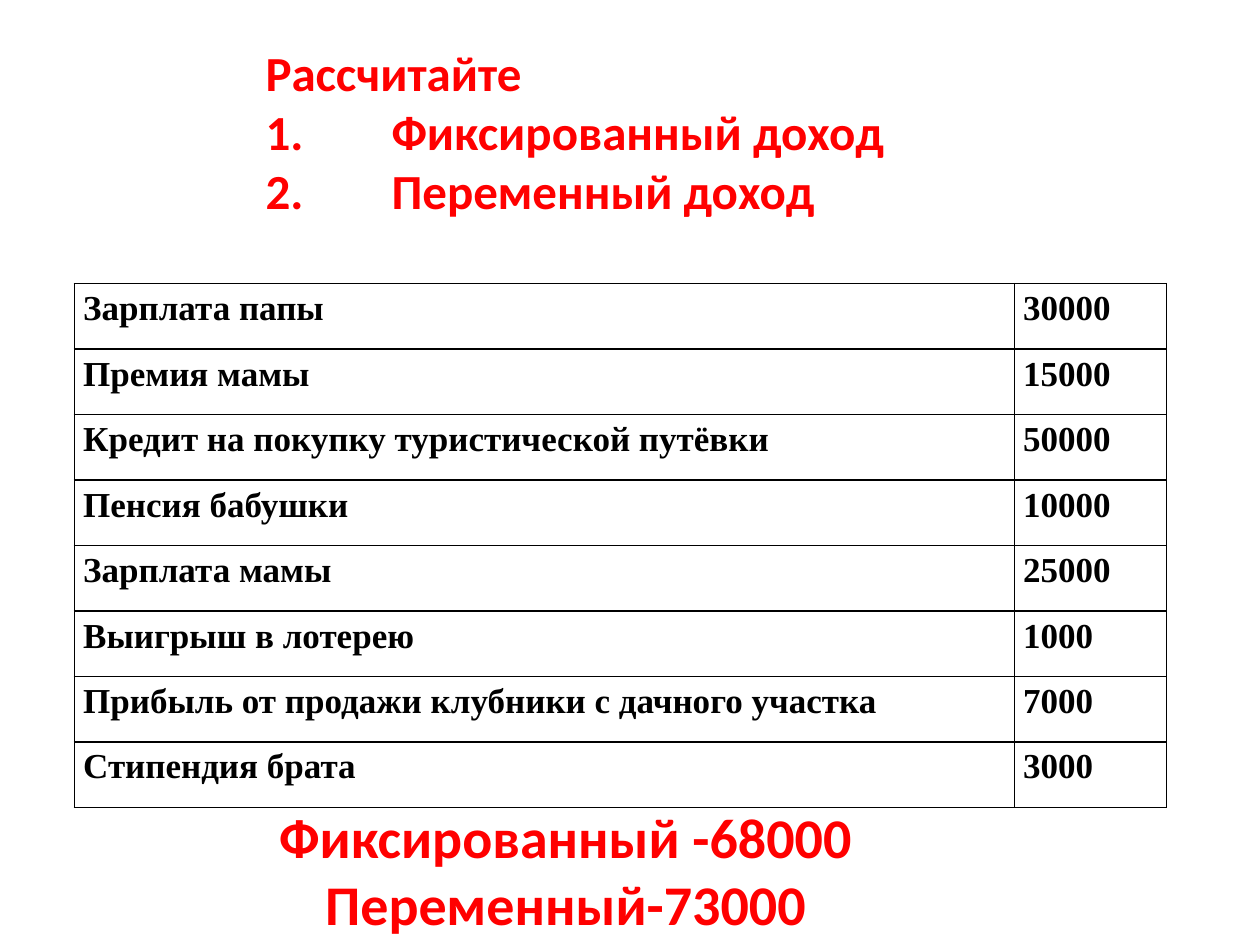
from lxml.etree import SubElement
from pptx import Presentation
from pptx.dml.color import RGBColor
from pptx.enum.text import MSO_AUTO_SIZE, PP_ALIGN
from pptx.oxml.ns import qn
from pptx.util import Inches, Pt

HUES = {"red": "FF0000", "ink": "000000"}
ROWS = [
    ("Зарплата папы", "30000"),
    ("Премия мамы", "15000"),
    ("Кредит на покупку туристической путёвки", "50000"),
    ("Пенсия бабушки", "10000"),
    ("Зарплата мамы", "25000"),
    ("Выигрыш в лотерею", "1000"),
    ("Прибыль от продажи клубники с дачного участка", "7000"),
    ("Стипендия брата", "3000"),
]


def add_run(para, text, size, face, hue):
    """Add one bold run to a paragraph."""
    run = para.add_run()
    run.text = text
    font = run.font
    font.size, font.name, font.bold = Pt(size), face, True
    font.color.rgb = RGBColor.from_string(HUES[hue])


def number(para):
    """Give a paragraph an automatic number and a hanging indent."""
    props = para._p.get_or_add_pPr()
    props.set("marL", str(Inches(1)))
    props.set("indent", str(-Inches(1)))
    SubElement(props, qn("a:buFont"), typeface="+mj-lt")
    SubElement(props, qn("a:buAutoNum"), type="arabicPeriod")


def add_text(slide, place, lines, size, align, listed=False):
    """Add a red text box, numbering all lines after the first if listed."""
    frame = slide.shapes.add_textbox(*map(Inches, place)).text_frame
    frame.word_wrap = False
    frame.auto_size = MSO_AUTO_SIZE.SHAPE_TO_FIT_TEXT
    for i, line in enumerate(lines):
        para = frame.add_paragraph() if i else frame.paragraphs[0]
        para.alignment = align
        if listed and i:
            number(para)
        add_run(para, line, size, "Calibri", "red")


def add_edges(cell):
    """Draw a thin line on each side of a cell."""
    props = cell._tc.get_or_add_tcPr()
    for i, side in enumerate(("lnL", "lnR", "lnT", "lnB")):
        line = props.makeelement(qn(f"a:{side}"), {"w": str(Pt(1))})
        fill = SubElement(line, qn("a:solidFill"))
        SubElement(fill, qn("a:srgbClr"), val=HUES["ink"])
        props.insert(i, line)


def fill_cell(cell, text):
    """Format one cell and write its text."""
    cell.fill.background()
    add_edges(cell)
    cell.margin_left = cell.margin_right = Inches(0.07)
    cell.margin_top = cell.margin_bottom = 0
    para = cell.text_frame.paragraphs[0]
    para.alignment = PP_ALIGN.JUSTIFY
    para.line_spacing = 1.15
    add_run(para, text, 20, "Times New Roman", "ink")


def add_grid(slide, place, widths, high):
    """Add the table of family income."""
    shape = slide.shapes.add_table(len(ROWS), len(widths), *map(Inches, place))
    table = shape.table
    table.first_row = table.horz_banding = False
    for col, width in zip(table.columns, widths):
        col.width = Inches(width)
    for row, texts in zip(table.rows, ROWS):
        row.height = Inches(high)
        for cell, text in zip(row.cells, texts):
            fill_cell(cell, text)


def main():
    """Build the slide and save it."""
    deck = Presentation()
    deck.slide_width, deck.slide_height = Inches(10), Inches(7.5)
    slide = deck.slides.add_slide(deck.slide_layouts[6])
    task = ["Рассчитайте", "Фиксированный доход", "Переменный доход"]
    add_text(slide, (2.01, 0.29, 5.14, 1.51), task, 28, PP_ALIGN.JUSTIFY, True)
    add_grid(slide, (0.59, 2.25, 8.67, 4.17), (7.46, 1.21), 0.52)
    sums = ["Фиксированный -68000", "Переменный-73000"]
    add_text(slide, (2.09, 6.32, 4.8, 1.18), sums, 32, PP_ALIGN.CENTER)
    deck.save("out.pptx")


if __name__ == "__main__":
    main()
